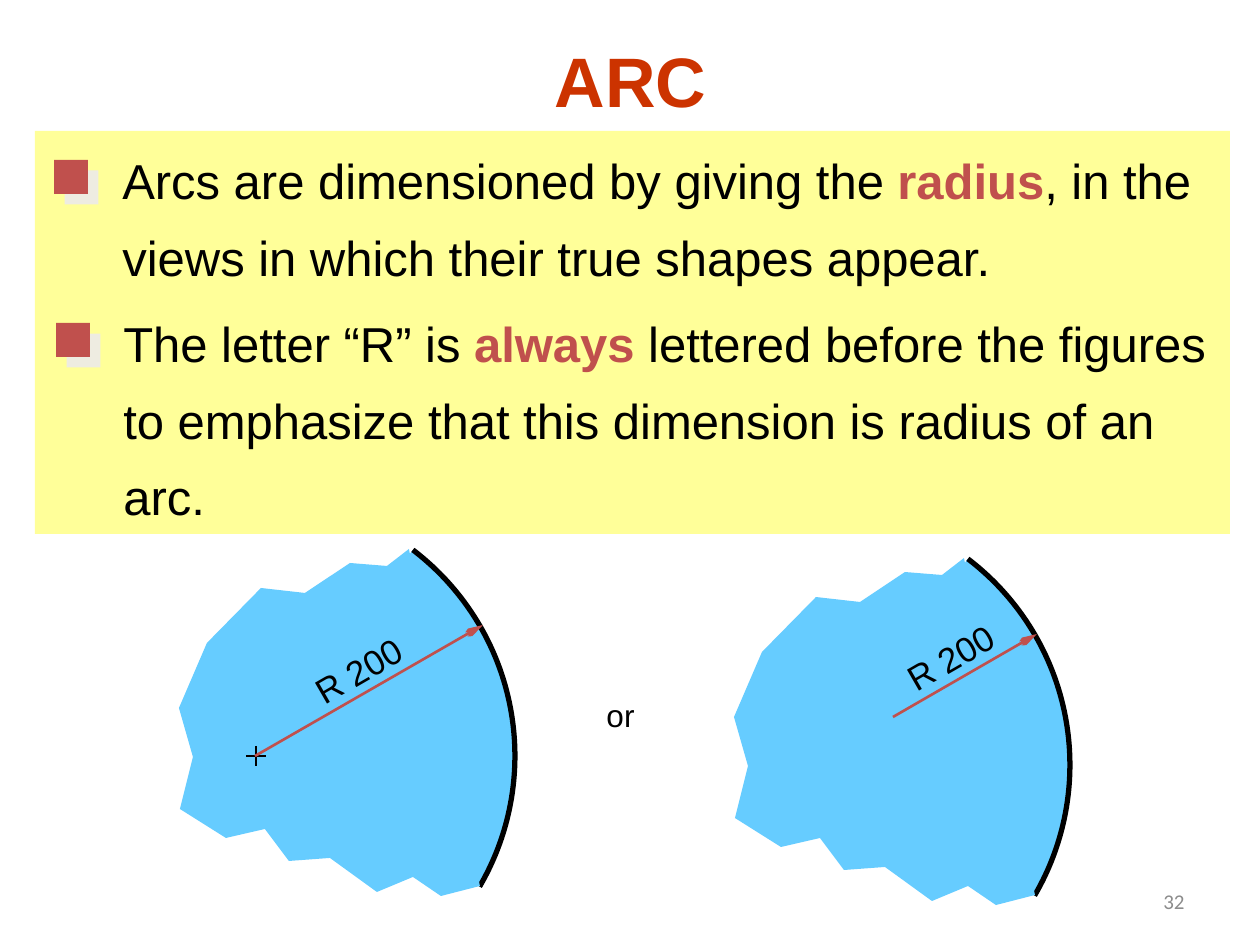
from dataclasses import dataclass

from lxml.etree import SubElement
from pptx import Presentation
from pptx.dml.color import RGBColor
from pptx.enum.shapes import MSO_CONNECTOR, MSO_SHAPE
from pptx.enum.text import MSO_ANCHOR, PP_ALIGN
from pptx.oxml.ns import qn
from pptx.util import Pt

SCALE = 914400 / 126  # EMU per px


@dataclass(frozen=True)
class Theme:
    title: str = "CC3300"
    accent: str = "C0504D"
    panel: str = "FFFF99"
    body: str = "66CCFF"
    ink: str = "000000"
    muted: str = "8C8C8C"
    shadow: str = "EEECE1"
    font: str = "Arial"
    number_font: str = "Calibri"
    title_size: int = 40
    text_size: int = 28
    label_size: int = 20
    or_size: int = 18
    number_size: int = 12


theme = Theme()


def px(*lengths):
    return [round(length * SCALE) for length in lengths]


def add_text(box, lines, size, color=theme.ink, font=theme.font, spacing=None):
    """Fill a box line by line; every second part between asterisks is accented."""
    text_frame = box.text_frame
    text_frame.word_wrap = False
    text_frame.text = "\n".join(lines)
    for paragraph, line in zip(text_frame.paragraphs, lines):
        paragraph.line_spacing = spacing
        paragraph.text = ""
        for index, part in enumerate(line.split("*")):
            run = paragraph.add_run()
            run.text = part
            run.font.name = font
            run.font.size = Pt(size)
            run.font.bold = index % 2 == 1
            run.font.color.rgb = RGBColor.from_string(theme.accent if index % 2 else color)


presentation = Presentation()
presentation.slide_width, presentation.slide_height = px(1260, 945)
slide = presentation.slides.add_slide(presentation.slide_layouts[5])
shapes = slide.shapes

# Title
title = shapes.title
title.left, title.top, title.width, title.height = px(95, 0, 1071, 158)
title.text_frame.text = "ARC"
title.text_frame.vertical_anchor = MSO_ANCHOR.MIDDLE
title_paragraph = title.text_frame.paragraphs[0]
title_paragraph.alignment = PP_ALIGN.CENTER
title_font = title_paragraph.runs[0].font
title_font.name, title_font.size, title_font.bold = theme.font, Pt(theme.title_size), True
title_font.color.rgb = RGBColor.from_string(theme.title)

# Broken-out bodies, each a circular sector with a ragged left edge
RADIUS = 259
CENTER = (256, 756)
ragged_edge = [
    (409, 549), (387, 566), (350, 563), (305, 593), (261, 588), (207, 643),
    (179, 708), (193, 757), (180, 809), (226, 838), (265, 829), (289, 861),
    (330, 858), (377, 892), (413, 877), (441, 896), (480, 886),
]
for shift_x, shift_y in [(0, 0), (555, 9)]:
    sector = shapes.add_shape(
        MSO_SHAPE.ARC,
        *px(CENTER[0] + shift_x - RADIUS, CENTER[1] + shift_y - RADIUS, 2 * RADIUS, 2 * RADIUS),
    )
    # Angles are held in 60000ths of a degree, adjustments in 100000ths
    for index, degrees in enumerate((307.3, 30.3)):
        sector.adjustments[index] = degrees * 0.6
    sector.line.color.rgb = RGBColor.from_string(theme.ink)
    sector.line.width = Pt(3)

    points = [(x + shift_x, y + shift_y) for x, y in ragged_edge]
    builder = shapes.build_freeform(*points[0], scale=SCALE)
    builder.add_line_segments(points[1:], close=True)
    ragged_body = builder.convert_to_shape()
    ragged_body.line.fill.background()
    for shape in (sector, ragged_body):
        shape.shadow.inherit = False
        shape.fill.solid()
        shape.fill.fore_color.rgb = RGBColor.from_string(theme.body)

# Yellow panel and square bullet markers
for box, color, has_shadow in [
    ((35, 131, 1195, 403), theme.panel, False),
    ((54, 160, 34, 34), theme.accent, True),
    ((56, 323, 34, 34), theme.accent, True),
]:
    rectangle = shapes.add_shape(MSO_SHAPE.RECTANGLE, *px(*box))
    rectangle.shadow.inherit = False
    rectangle.fill.solid()
    rectangle.fill.fore_color.rgb = RGBColor.from_string(color)
    rectangle.line.fill.background()
    if has_shadow:
        effects = rectangle._element.spPr.find(qn("a:effectLst"))
        outer = SubElement(effects, qn("a:outerShdw"), dist=str(Pt(8.5)), dir="2700000",
                           algn="ctr", rotWithShape="0")
        SubElement(outer, qn("a:srgbClr"), val=theme.shadow)

# Statements
for box, lines in [
    ((110, 127, 1108, 159), [
        "Arcs are dimensioned by giving the *radius*, in the",
        "views in which their true shapes appear.",
    ]),
    ((111, 290, 1121, 237), [
        "The letter “R” is *always* lettered before the figures",
        "to emphasize that this dimension is radius of an",
        "arc.",
    ]),
]:
    add_text(shapes.add_textbox(*px(*box)), lines, theme.text_size, spacing=1.3)

# Centre mark and radius arrows
for ends, color, width, has_arrow in [
    ((256, 746, 256, 766), theme.ink, 0.75, False),
    ((266, 756, 246, 756), theme.ink, 0.75, False),
    ((255, 756, 483, 625), theme.accent, 1.5, True),
    ((893, 717, 1037, 634), theme.accent, 1.5, True),
]:
    connector = shapes.add_connector(MSO_CONNECTOR.STRAIGHT, *px(*ends))
    connector.line.color.rgb = RGBColor.from_string(color)
    connector.line.width = Pt(width)
    if has_arrow:
        SubElement(connector.line._get_or_add_ln(), qn("a:tailEnd"),
                   type="arrow", w="sm", len="lg")
    SubElement(connector._element.spPr, qn("a:effectLst"))

# Radius labels and the word between the figures, centred without side margins
for box, text, size, rotation in [
    ((299, 643, 118, 54), "R 200", theme.label_size, 330),
    ((891, 630, 118, 54), "R 200", theme.label_size, 330),
    ((586, 690, 69, 72), "or", theme.or_size, 0),
]:
    label = shapes.add_textbox(*px(*box))
    label.rotation = rotation
    add_text(label, [text], size)
    label.text_frame.margin_left = label.text_frame.margin_right = 0
    label.text_frame.paragraphs[0].alignment = PP_ALIGN.CENTER

# Slide number
number = shapes.add_textbox(*px(903, 876, 294, 50))
add_text(number, ["32"], theme.number_size, theme.muted, theme.number_font)
number.text_frame.word_wrap = True
number.text_frame.vertical_anchor = MSO_ANCHOR.MIDDLE
number.text_frame.paragraphs[0].alignment = PP_ALIGN.RIGHT

presentation.save("out.pptx")
